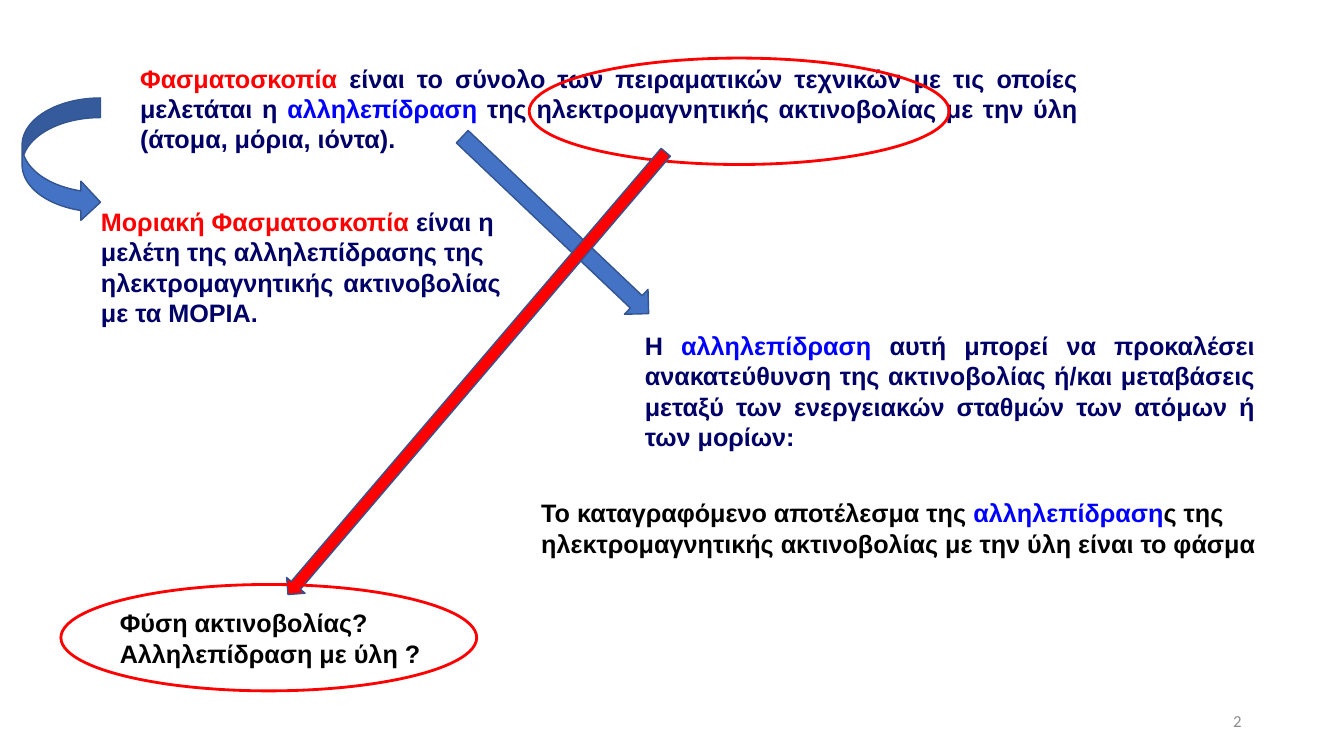
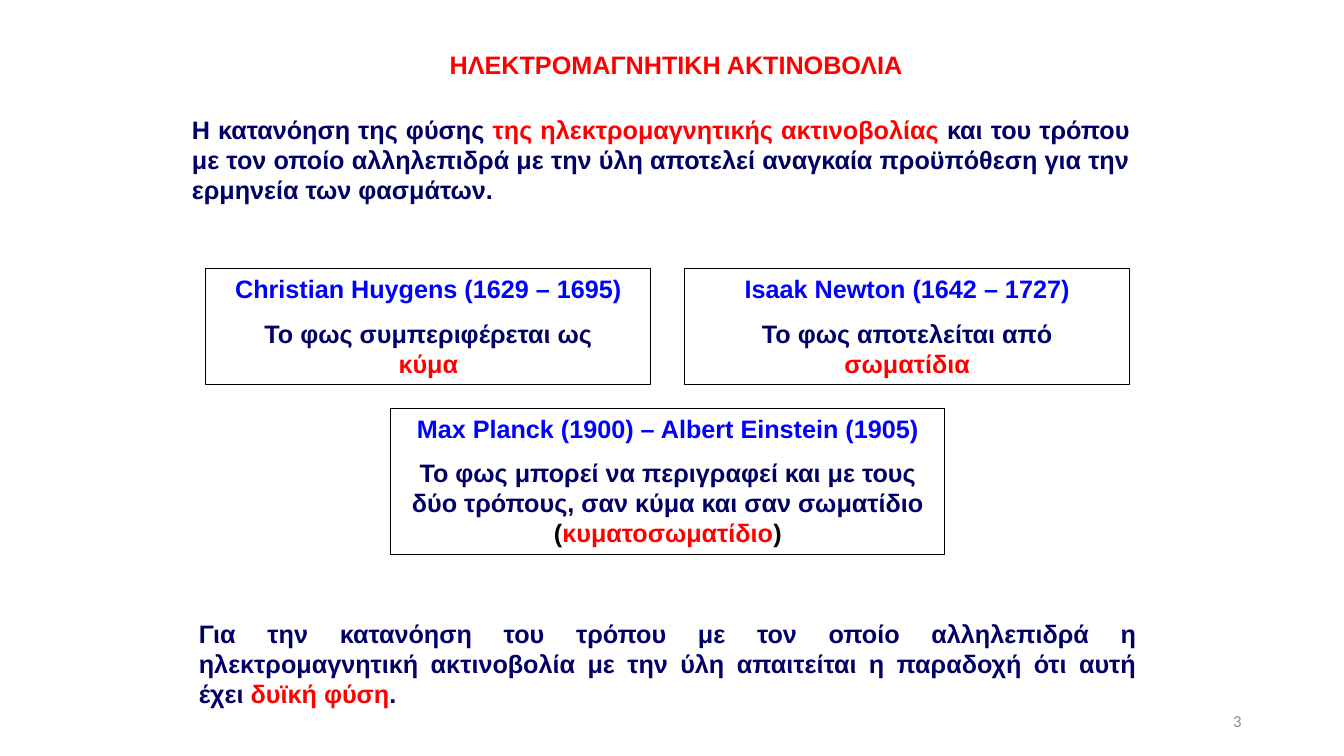
import pptx
import pptx.util
import pptx.dml.color
import pptx.enum.shapes
import pptx.enum.text

Pt = pptx.util.Pt
ALIGN = pptx.enum.text.PP_ALIGN
ANCHOR = pptx.enum.text.MSO_ANCHOR
AUTO_SIZE = pptx.enum.text.MSO_AUTO_SIZE
SHAPE = pptx.enum.shapes.MSO_SHAPE

COLORS = {
    "white": "FFFFFF",
    "black": "000000",
    "navy": "000066",
    "blue": "0000FF",
    "red": "FF0000",
    "arrow": "4472C4",
    "arrow_edge": "325491",
    "number": "8C8C8C",
}
TITLE_ONLY, BLANK = 5, 6
NAME_GAP = 10


def rgb(name):
    return pptx.dml.color.RGBColor.from_string(COLORS[name])


def write(frame, paragraphs, align=ALIGN.LEFT, wrap=True, size=18,
          font="Arial", bold=True):
    """Each paragraph is a list of (text, colour) runs."""
    frame.word_wrap = wrap
    frame.auto_size = AUTO_SIZE.SHAPE_TO_FIT_TEXT
    frame.vertical_anchor = ANCHOR.TOP
    for index, runs in enumerate(paragraphs):
        paragraph = frame.paragraphs[0] if index == 0 else frame.add_paragraph()
        paragraph.alignment = align
        paragraph.font.name = font
        paragraph.font.size = Pt(size)
        paragraph.font.bold = bold
        for text, color in runs:
            run = paragraph.add_run()
            run.text = text
            run.font.color.rgb = rgb(color)


def add_text(slide, box, paragraphs, **style):
    label = slide.shapes.add_textbox(*map(Pt, box))
    write(label.text_frame, paragraphs, **style)
    return label


def add_figure(slide, kind, box, fill=None, line=None, width=1, rotation=0):
    figure = slide.shapes.add_shape(kind, *map(Pt, box))
    figure.shadow.inherit = False
    figure.rotation = rotation
    if fill:
        figure.fill.solid()
        figure.fill.fore_color.rgb = rgb(fill)
    else:
        figure.fill.background()
    if line:
        figure.line.color.rgb = rgb(line)
        figure.line.width = Pt(width)
    else:
        figure.line.fill.background()
    return figure


def add_statement(slide, box, paragraphs):
    panel = add_figure(slide, SHAPE.RECTANGLE, box, "white")
    write(panel.text_frame, paragraphs, ALIGN.JUSTIFY)


def add_theory(slide, box, scientists, claim):
    """Framed box: the scientists' names, then their view of light."""
    panel = add_figure(slide, SHAPE.RECTANGLE, box, "white", "black", 0.75)
    write(panel.text_frame, [[(scientists, "blue")]] + claim, ALIGN.CENTER)
    panel.text_frame.paragraphs[1].space_before = Pt(NAME_GAP)


def add_highlight(slide, box):
    add_figure(slide, SHAPE.OVAL, box, line="red", width=2)


def add_arrow(slide, kind, box, fill="arrow", rotation=0):
    add_figure(slide, kind, box, fill, "arrow_edge", 1, rotation)


def new_slide(deck, layout, number):
    slide = deck.slides.add_slide(deck.slide_layouts[layout])
    label = add_text(slide, (678, 500.5, 216, 28.75), [[(str(number), "number")]],
                     align=ALIGN.RIGHT, size=12, font="Calibri", bold=False)
    label.text_frame.auto_size = AUTO_SIZE.NONE
    label.text_frame.vertical_anchor = ANCHOR.MIDDLE
    return slide


def build_spectroscopy(deck):
    slide = new_slide(deck, BLANK, 2)

    # Definition of spectroscopy
    add_statement(slide, (93, 41.5, 684, 72.7), [[
        ("Φασματοσκοπία", "red"),
        (" είναι το σύνολο των πειραματικών τεχνικών με τις οποίες μελετάται η ", "navy"),
        ("αλληλεπίδραση", "blue"),
        (" της ηλεκτρομαγνητικής ακτινοβολίας με την ύλη (άτομα, μόρια, ιόντα).", "navy"),
    ]])
    add_highlight(slide, (378, 41.5, 300, 76))

    # Molecular spectroscopy
    add_statement(slide, (65, 144, 300, 94.5), [
        [("Μοριακή Φασματοσκοπία", "red"), (" είναι η", "navy")],
        [("μελέτη της αλληλεπίδρασης της", "navy")],
        [("ηλεκτρομαγνητικής ακτινοβολίας με τα ΜΟΡΙΑ.", "navy")],
    ])
    add_arrow(slide, SHAPE.CURVED_RIGHT_ARROW, (15.8, 70, 56, 88.5))

    # Interaction and its result
    add_statement(slide, (453.5, 232.5, 450, 94.5), [[
        ("Η ", "navy"),
        ("αλληλεπίδραση", "blue"),
        (" αυτή μπορεί να προκαλέσει ανακατεύθυνση της ακτινοβολίας ή/και "
         "μεταβάσεις μεταξύ των ενεργειακών σταθμών των ατόμων ή των μορίων:", "navy"),
    ]])
    add_arrow(slide, SHAPE.DOWN_ARROW, (384.5, 69, 24.5, 183.6), rotation=313.5)
    add_text(slide, (379.5, 352, 530, 51), [
        [("Το καταγραφόμενο αποτέλεσμα της ", "black"),
         ("αλληλεπίδραση", "blue"), ("ς της", "black")],
        [("ηλεκτρομαγνητικής ακτινοβολίας με την ύλη είναι το φάσμα", "black")],
    ], wrap=False)

    # Questions about radiation
    add_arrow(slide, SHAPE.DOWN_ARROW, (332, 59, 17.3, 415.5), "red", 40.5)
    add_highlight(slide, (43.5, 417.5, 297, 76))
    add_text(slide, (78.5, 430.5, 243.5, 51), [
        [("Φύση ακτινοβολίας?", "black")],
        [("Αλληλεπίδραση με ύλη ?", "black")],
    ])


def build_radiation(deck):
    slide = new_slide(deck, TITLE_ONLY, 3)

    # Title and introduction
    title = slide.shapes.title
    title.left, title.top, title.width, title.height = map(Pt, (314, 31.7, 341.3, 29))
    write(title.text_frame, [[("ΗΛΕΚΤΡΟΜΑΓΝΗΤΙΚΗ ΑΚΤΙΝΟΒΟΛΙΑ", "red")]], wrap=False)
    add_statement(slide, (130, 78, 684, 72), [[
        ("Η κατανόηση της φύσης ", "navy"),
        ("της ηλεκτρομαγνητικής ακτινοβολίας ", "red"),
        ("και του τρόπου με τον οποίο αλληλεπιδρά με την ύλη αποτελεί "
         "αναγκαία προϋπόθεση για την ερμηνεία των φασμάτων.", "navy"),
    ]])

    # Theories of light
    add_theory(slide, (147, 192, 318, 82.5), "Christian Huygens (1629 – 1695)", [
        [("Το φως συμπεριφέρεται ως", "navy")], [("κύμα", "red")],
    ])
    add_theory(slide, (489, 192, 318, 82.5), "Isaak Newton (1642 – 1727)", [
        [("Το φως αποτελείται από", "navy")], [("σωματίδια", "red")],
    ])
    add_theory(slide, (279, 291.5, 396, 104.5), "Max Planck (1900) – Albert Einstein (1905)", [
        [("Το φως μπορεί να περιγραφεί και με τους δύο τρόπους, "
          "σαν κύμα και σαν σωματίδιο", "navy")],
        [("(", "black"), ("κυματοσωματίδιο", "red"), (")", "black")],
    ])

    # Conclusion
    add_statement(slide, (135, 438, 684, 72), [[
        ("Για την κατανόηση του τρόπου με τον οποίο αλληλεπιδρά η "
         "ηλεκτρομαγνητική ακτινοβολία με την ύλη απαιτείται η παραδοχή "
         "ότι αυτή έχει ", "navy"),
        ("δυϊκή φύση", "red"),
        (".", "navy"),
    ]])


def main():
    deck = pptx.Presentation()
    deck.slide_width, deck.slide_height = Pt(960), Pt(540)
    build_spectroscopy(deck)
    build_radiation(deck)
    deck.save("out.pptx")


if __name__ == "__main__":
    main()
